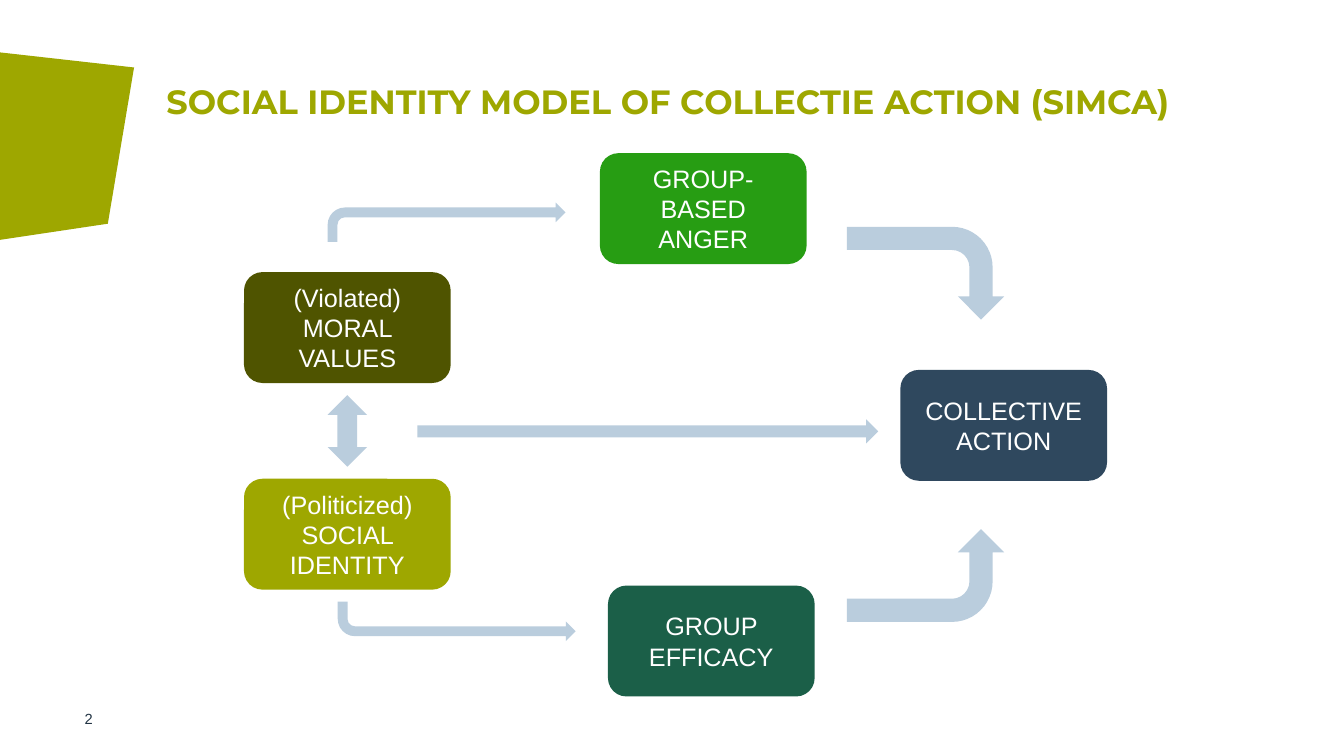
from pptx import Presentation
from pptx.dml.color import RGBColor
from pptx.enum.shapes import MSO_SHAPE as SHAPE
from pptx.enum.text import MSO_ANCHOR as ANCHOR, PP_ALIGN as ALIGN
from pptx.util import Inches, Pt

OLIVE, NAVY, ARROW, WHITE = "9EA700", "213343", "BACDDD", "FFFFFF"


def color(hex_code):
    return RGBColor.from_string(hex_code)


def write(tf, text, size=18, font="Arial", fill=WHITE, bold=False,
          align=ALIGN.LEFT, anchor=ANCHOR.TOP, spacing=None):
    tf.word_wrap = True
    tf.vertical_anchor = anchor
    p = tf.paragraphs[0]
    p.alignment = align
    if spacing:
        p.line_spacing = spacing
    r = p.add_run()
    r.text = text
    r.font.size = Pt(size)
    r.font.name = font
    r.font.bold = bold
    r.font.color.rgb = color(fill)


class Diagram:
    BOX_W, BOX_H = 2.05, 1.1

    def __init__(self, slide):
        self.s = slide

    def paint(self, sp, fill):
        sp.shadow.inherit = False
        sp.fill.solid()
        sp.fill.fore_color.rgb = color(fill)
        sp.line.fill.background()

    def polygon(self, points, fill):
        start, *rest = [(Inches(x), Inches(y)) for x, y in points]
        builder = self.s.shapes.build_freeform(*start)
        builder.add_line_segments(rest, close=True)
        self.paint(builder.convert_to_shape(), fill)

    def text(self, x, y, w, h, text, top=0, **style):
        sp = self.s.shapes.add_textbox(*map(Inches, (x, y, w, h)))
        tf = sp.text_frame
        tf.margin_left = tf.margin_right = tf.margin_bottom = 0
        tf.margin_top = Inches(top)
        write(tf, text, **style)

    def shape(self, kind, x, y, w, h, fill):
        sp = self.s.shapes.add_shape(kind, *map(Inches, (x, y, w, h)))
        self.paint(sp, fill)
        return sp

    def box(self, x, y, text, fill):
        sp = self.shape(SHAPE.ROUNDED_RECTANGLE, x, y, self.BOX_W, self.BOX_H, fill)
        write(sp.text_frame, text, align=ALIGN.CENTER, anchor=ANCHOR.MIDDLE)

    def arrow(self, kind, x, y, w, h, rotation=0, flip=False):
        sp = self.shape(kind, x, y, w, h, ARROW)
        sp.rotation = rotation
        if flip:
            sp.element.spPr.xfrm.set("flipV", "1")


def main():
    prs = Presentation()
    prs.slide_width, prs.slide_height = Inches(13.33), Inches(7.5)
    d = Diagram(prs.slides.add_slide(prs.slide_layouts[6]))

    # Corner accent, slide number and title
    d.polygon([(0, 0.52), (0, 2.38), (1.07, 2.22), (1.33, 0.67)], OLIVE)
    d.text(0.29, 7.02, 0.63, 0.2, "2", size=10.5, fill=NAVY,
           align=ALIGN.RIGHT, spacing=Pt(14.2))
    d.text(1.65, 0.8, 10.76, 0.41, "SOCIAL IDENTITY MODEL OF COLLECTIE ACTION (SIMCA)",
           top=0.04, size=24, font="Montserrat", fill=OLIVE, bold=True,
           anchor=ANCHOR.BOTTOM, spacing=0.9)

    # Concepts of the model
    for x, y, text, fill in [
        (2.42, 2.7, "(Violated) MORAL VALUES", "4F5400"),
        (2.42, 4.75, "(Politicized) SOCIAL IDENTITY", OLIVE),
        (5.95, 1.52, "GROUP-BASED ANGER", "279D13"),
        (6.03, 5.81, "GROUP EFFICACY", "1B5F48"),
        (8.93, 3.67, "COLLECTIVE ACTION", "2F485E"),
    ]:
        d.box(x, y, text, fill)

    # Arrows between the concepts
    d.arrow(SHAPE.UP_DOWN_ARROW, 3.25, 3.92, 0.39, 0.71)
    d.arrow(SHAPE.BENT_ARROW, 3.25, 2.01, 2.36, 0.39)
    d.arrow(SHAPE.BENT_ARROW, 3.35, 5.97, 2.36, 0.39, flip=True)
    d.arrow(SHAPE.BENT_ARROW, 8.72, 1.93, 0.92, 1.56, rotation=90)
    d.arrow(SHAPE.BENT_ARROW, 8.72, 4.93, 0.92, 1.56, rotation=270, flip=True)
    d.arrow(SHAPE.RIGHT_ARROW, 4.14, 4.16, 4.57, 0.24)

    prs.save("out.pptx")


if __name__ == "__main__":
    main()
